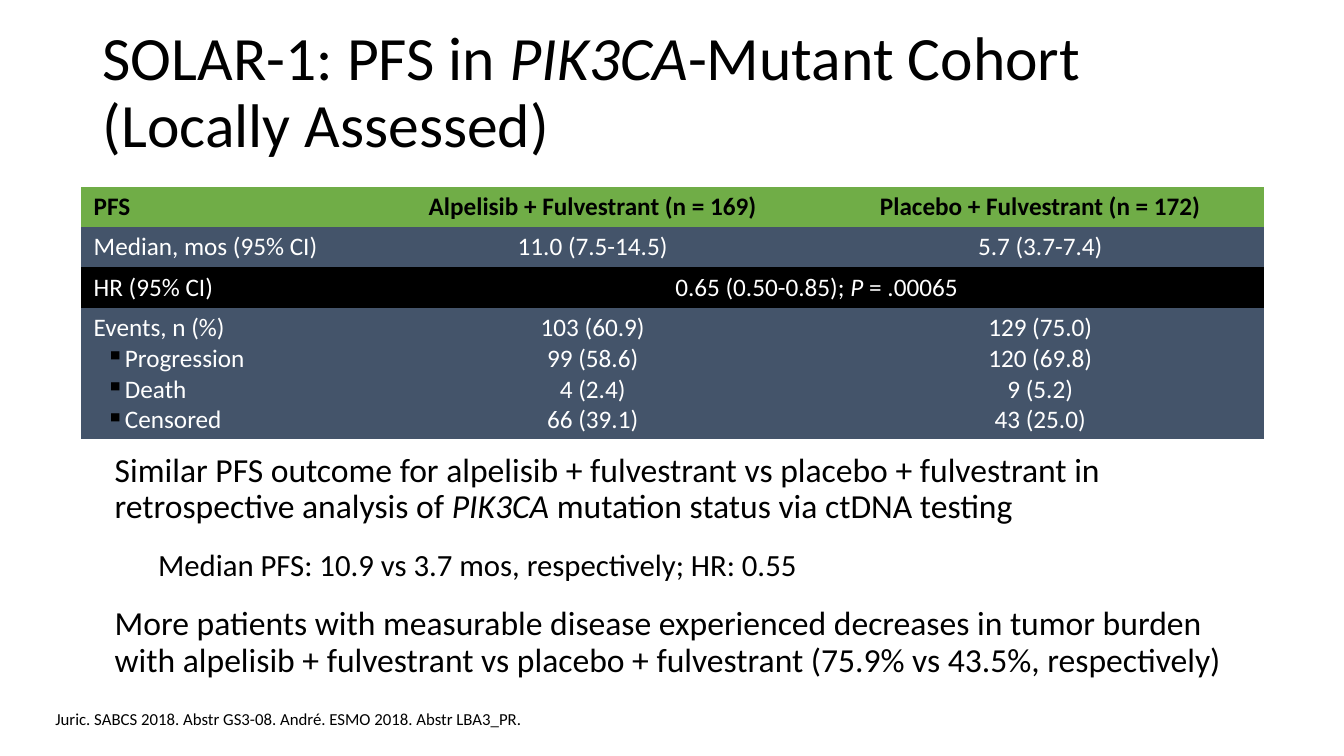
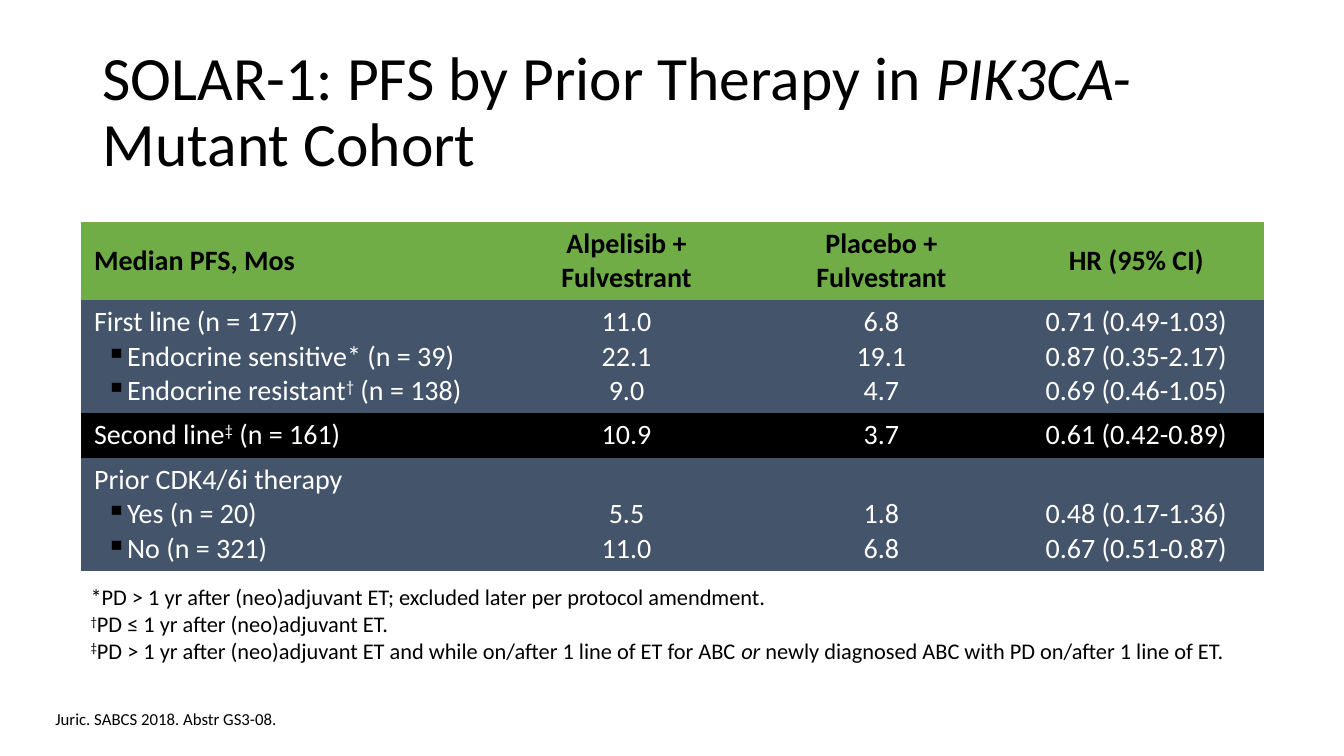
from dataclasses import dataclass

from lxml import etree
from pptx import Presentation
from pptx.dml.color import RGBColor
from pptx.enum.text import MSO_ANCHOR, PP_ALIGN
from pptx.oxml.ns import qn
from pptx.util import Emu, Inches, Pt

LEFT, CENTER = PP_ALIGN.LEFT, PP_ALIGN.CENTER
TOP, MIDDLE, BOTTOM = MSO_ANCHOR.TOP, MSO_ANCHOR.MIDDLE, MSO_ANCHOR.BOTTOM

SLIDE_WIDTH, SLIDE_HEIGHT = Inches(13.333), Inches(7.5)
FONT = "Calibri"
BLACK, WHITE, GREEN, SLATE = "000000", "FFFFFF", "70AD47", "44546A"
ROW_FILLS = (GREEN, SLATE, BLACK, SLATE)
CELL_INSETS = {"margin_left": Inches(0.13), "margin_right": Inches(0.13),
               "margin_top": Inches(0.05), "margin_bottom": Inches(0.05)}
PLAIN_TABLE_STYLE = "{2D5ABB26-0587-4C30-8999-92F81FD0307C}"


@dataclass(frozen=True)
class Area:
    """Left, top, width and height in percent of the slide."""
    left: float
    top: float
    width: float
    height: float

    def box(self) -> tuple[Emu, Emu, Emu, Emu]:
        return (share(self.left, SLIDE_WIDTH), share(self.top, SLIDE_HEIGHT),
                share(self.width, SLIDE_WIDTH), share(self.height, SLIDE_HEIGHT))


@dataclass(frozen=True)
class Span:
    text: str
    italic: bool = False
    raised: bool = False


@dataclass(frozen=True)
class Line:
    """One paragraph; indents are in inches."""
    spans: tuple[Span, ...]
    indent: float = 0
    hanging: float = 0
    bullet: str = ""
    size: int = 0


@dataclass(frozen=True)
class Style:
    size: int
    color: str = BLACK
    bold: bool = False
    align: PP_ALIGN = LEFT
    spacing: float = 1.0
    gap_before: int = 0
    gap_after: int = 0


@dataclass(frozen=True)
class Grid:
    """Row heights are in percent of the slide, columns are proportions."""
    area: Area
    columns: tuple[float, ...]
    rows: tuple[float, ...]
    size: int
    cells: tuple[tuple[tuple[Line, ...], ...], ...]


TITLE = Style(44, spacing=0.9)
BODY = Style(24, spacing=0.9, gap_before=10, gap_after=7)
NOTES = Style(16)
SOURCE = Style(12)
SOURCE_AREA = Area(3.38, 93.07, 65.7, 4)


def share(percent: float, whole: int) -> Emu:
    return Emu(round(whole * percent / 100))


def rgb(color: str) -> RGBColor:
    return RGBColor.from_string(color)


def line(*parts: str | Span, **layout) -> Line:
    return Line(tuple(Span(part) if isinstance(part, str) else part
                      for part in parts), **layout)


def item(*parts: str | Span) -> Line:
    return line(*parts, indent=0.31, hanging=0.19, bullet="▪")


def values(*texts: str) -> tuple[Line, ...]:
    return tuple(line(text) for text in texts)


def set_formats(target, formats: dict) -> None:
    for name, value in formats.items():
        setattr(target, name, value)


def indent_paragraph(paragraph, content: Line) -> None:
    properties = paragraph._p.get_or_add_pPr()
    properties.set("marL", str(Inches(content.indent)))
    properties.set("indent", str(-Inches(content.hanging)))
    if content.bullet:
        color = etree.SubElement(properties, qn("a:buClr"))
        etree.SubElement(color, qn("a:srgbClr"), val=BLACK)
        etree.SubElement(properties, qn("a:buChar"), char=content.bullet)


def write_lines(frame, lines: tuple[Line, ...], style: Style) -> None:
    for index, content in enumerate(lines):
        paragraph = frame.add_paragraph() if index else frame.paragraphs[0]
        indent_paragraph(paragraph, content)
        set_formats(paragraph, {
            "alignment": style.align, "line_spacing": style.spacing,
            "space_before": Pt(style.gap_before if index else 0),
            "space_after": Pt(style.gap_after)})
        for span in content.spans:
            run = paragraph.add_run()
            run.text = span.text
            set_formats(run.font, {
                "name": FONT, "size": Pt(content.size or style.size),
                "bold": style.bold, "italic": span.italic})
            run.font.color.rgb = rgb(style.color)
            if span.raised:
                run.font._element.set("baseline", "30000")


def add_text(page, area: Area, lines: tuple[Line, ...], style: Style,
             anchor: MSO_ANCHOR = TOP) -> None:
    frame = page.shapes.add_textbox(*area.box()).text_frame
    set_formats(frame, {"word_wrap": True, "vertical_anchor": anchor})
    write_lines(frame, lines, style)


def add_grid(page, grid: Grid) -> None:
    holder = page.shapes.add_table(len(grid.rows), len(grid.columns),
                                   *grid.area.box())
    for style_id in holder._element.iter(qn("a:tableStyleId")):
        style_id.text = PLAIN_TABLE_STYLE
    table = holder.table
    set_formats(table, {"first_row": False, "horz_banding": False})
    for column, weight in zip(table.columns, grid.columns):
        column.width = share(grid.area.width * weight / sum(grid.columns),
                             SLIDE_WIDTH)
    for row_index, contents in enumerate(grid.cells):
        table.rows[row_index].height = share(grid.rows[row_index], SLIDE_HEIGHT)
        most_lines = max(len(lines) for lines in contents)
        is_header = row_index == 0
        for column_index, lines in enumerate(contents):
            cell = table.cell(row_index, column_index)
            # Values missing a heading line sit level with the lower labels
            is_short = not is_header and len(lines) < most_lines
            set_formats(cell, CELL_INSETS)
            cell.vertical_anchor = BOTTOM if is_short else MIDDLE
            cell.fill.solid()
            cell.fill.fore_color.rgb = rgb(ROW_FILLS[row_index])
            write_lines(cell.text_frame, lines, Style(
                grid.size, BLACK if is_header else WHITE, is_header,
                CENTER if column_index else LEFT))
        # The last value of a short row spans the remaining columns
        if len(contents) < len(grid.columns):
            table.cell(row_index, len(contents) - 1).merge(
                table.cell(row_index, len(grid.columns) - 1))


def add_page(deck, title: Line, title_top: float, grid: Grid, source: str):
    page = deck.slides.add_slide(deck.slide_layouts[6])
    add_text(page, Area(6.9, title_top, 86.25, 19.33), (title,), TITLE, MIDDLE)
    add_grid(page, grid)
    add_text(page, SOURCE_AREA, values(source), SOURCE, BOTTOM)
    return page


COHORT_GRID = Grid(
    Area(6, 24.67, 88.05, 33.33), (2.86, 4.44, 4.44),
    (5.33, 5.33, 5.33, 17.33), 18, (
        (values("PFS"), values("Alpelisib + Fulvestrant (n = 169)"),
         values("Placebo + Fulvestrant (n = 172)")),
        (values("Median, mos (95% CI)"), values("11.0 (7.5-14.5)"),
         values("5.7 (3.7-7.4)")),
        (values("HR (95% CI)"),
         (line("0.65 (0.50-0.85); ", Span("P ", italic=True), "= .00065"),)),
        ((line("Events, n (%)"), item("Progression"), item("Death"),
          item("Censored")),
         values("103 (60.9)", "99 (58.6)", "4 (2.4)", "66 (39.1)"),
         values("129 (75.0)", "120 (69.8)", "9 (5.2)", "43 (25.0)")),
    ))

THERAPY_GRID = Grid(
    Area(6.03, 29.33, 88, 46.13), (4.15, 2.53, 2.53, 2.53),
    (10.37, 14.95, 5.9, 14.95), 20, (
        (values("Median PFS, Mos"), values("Alpelisib + Fulvestrant"),
         values("Placebo + Fulvestrant"), values("HR (95% CI)")),
        ((line("First line (n = 177)"), item("Endocrine sensitive* (n = 39)"),
          item("Endocrine resistant", Span("†", raised=True), " (n = 138)")),
         values("11.0", "22.1", "9.0"), values("6.8", "19.1", "4.7"),
         values("0.71 (0.49-1.03)", "0.87 (0.35-2.17)", "0.69 (0.46-1.05)")),
        ((line("Second line", Span("‡", raised=True), " (n = 161)"),),
         values("10.9"), values("3.7"), values("0.61 (0.42-0.89)")),
        ((line("Prior CDK4/6i therapy"), item("Yes (n = 20)"),
          item("No (n = 321)")),
         values("5.5", "11.0"), values("1.8", "6.8"),
         values("0.48 (0.17-1.36)", "0.67 (0.51-0.87)")),
    ))


def main() -> None:
    deck = Presentation()
    set_formats(deck, {"slide_width": SLIDE_WIDTH, "slide_height": SLIDE_HEIGHT})

    # PFS in the mutant cohort
    page = add_page(
        deck, line("SOLAR-1: PFS in ", Span("PIK3CA", italic=True),
                   "-Mutant Cohort (Locally Assessed)"), 2.8, COHORT_GRID,
        "Juric. SABCS 2018. Abstr GS3-08. André. ESMO 2018. Abstr LBA3_PR.")
    add_text(page, Area(4.95, 59.33, 89.25, 30.53), (
        line("Similar PFS outcome for alpelisib + fulvestrant vs placebo + "
             "fulvestrant in retrospective analysis of ",
             Span("PIK3CA", italic=True),
             " mutation status via ctDNA testing", indent=0.38),
        line("Median PFS: 10.9 vs 3.7 mos, respectively; HR: 0.55",
             indent=0.81, size=22),
        line("More patients with measurable disease experienced decreases in "
             "tumor burden with alpelisib + fulvestrant vs placebo + "
             "fulvestrant (75.9% vs 43.5%, respectively)", indent=0.38),
    ), BODY)

    # PFS by prior therapy
    page = add_page(
        deck, line("SOLAR-1: PFS by Prior Therapy in ",
                   Span("PIK3CA-", italic=True), "Mutant Cohort"), 5.33,
        THERAPY_GRID, "Juric. SABCS 2018. Abstr GS3-08.")
    add_text(page, Area(6, 76.53, 88.05, 12.13), (
        line("*PD > 1 yr after (neo)adjuvant ET; excluded later per protocol "
             "amendment."),
        line(Span("†", raised=True), "PD ≤ 1 yr after (neo)adjuvant ET."),
        line(Span("‡", raised=True),
             "PD > 1 yr after (neo)adjuvant ET and while on/after 1 line of "
             "ET for ABC ", Span("or", italic=True),
             " newly diagnosed ABC with PD on/after 1 line of ET."),
    ), NOTES)

    deck.save("out.pptx")


if __name__ == "__main__":
    main()
